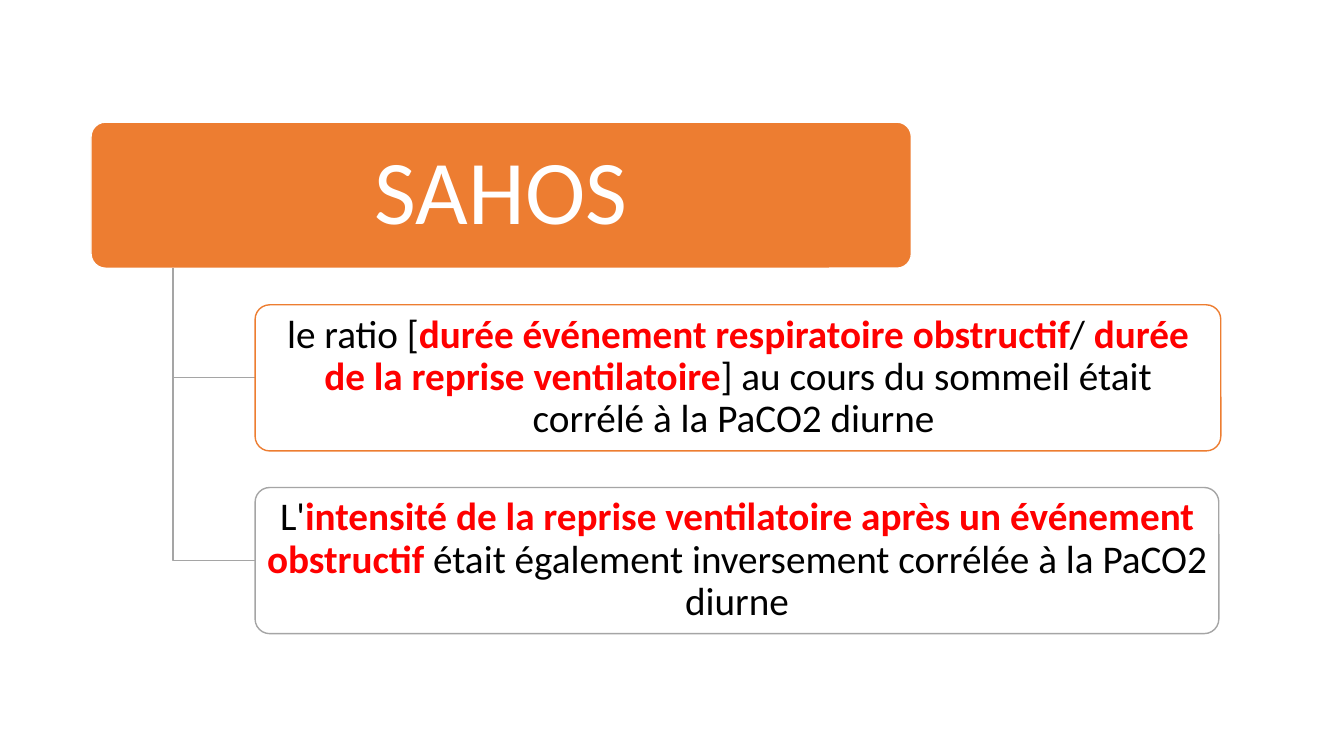
from dataclasses import dataclass

from lxml.etree import SubElement
from pptx import Presentation
from pptx.dml.color import RGBColor
from pptx.enum.shapes import MSO_SHAPE as Preset
from pptx.enum.text import MSO_ANCHOR as Anchor, PP_ALIGN as Align
from pptx.oxml.ns import qn
from pptx.slide import Slide
from pptx.util import Pt

COLORS = {
    "orange": "ED7D31",
    "gray": "A5A5A5",
    "white": "FFFFFF",
    "black": "000000",
    "red": "FF0000",
}
HEIGHT = 104.4
GAP = HEIGHT / 4
HEADING_LEFT, HEADING_TOP, HEADING_WIDTH = 65, 87.2, 586
TRUNK_LEFT = HEADING_LEFT + HEADING_WIDTH / 10
FINDING_LEFT = HEADING_LEFT + HEADING_WIDTH / 5


@dataclass
class Phrase:
    text: str
    color: str = "black"
    bold: bool = False


@dataclass
class Node:
    left: float
    width: float
    fill: str
    outline: str
    size: float
    inset_x: float
    inset_y: float
    phrases: list[Phrase]
    opacity: int = 100


def rgb(name: str) -> RGBColor:
    return RGBColor.from_string(COLORS[name])


def key(text: str) -> Phrase:
    return Phrase(text, "red", True)


def finding(width: float, outline: str, phrases: list[Phrase]) -> Node:
    return Node(FINDING_LEFT, width, "white", outline, 28, 4.2, 2.8, phrases, 90)


HEADING = Node(HEADING_LEFT, HEADING_WIDTH, "orange", "white", 65, 9.75, 6.5,
               [Phrase("SAHOS", "white")])
FINDINGS = [
    finding(689.8, "orange", [
        Phrase("le ratio ["),
        key("durée événement respiratoire obstructif"),
        Phrase("/ "),
        key("durée de la reprise ventilatoire"),
        Phrase("] au cours du sommeil était corrélé à la PaCO2 diurne "),
    ]),
    finding(688.4, "gray", [
        Phrase("L'"),
        key("intensité de la reprise ventilatoire après un événement obstructif "),
        Phrase("était également inversement corrélée à la PaCO2 diurne"),
    ]),
]


def draw_node(slide: Slide, node: Node, top: float) -> None:
    box = slide.shapes.add_shape(Preset.ROUNDED_RECTANGLE, Pt(node.left), Pt(top),
                                 Pt(node.width), Pt(HEIGHT))
    box.adjustments[0] = 0.1
    box.shadow.inherit = False
    box.fill.solid()
    box.fill.fore_color.rgb = rgb(node.fill)
    if node.opacity < 100:
        fill_color = box.fill._xPr.find(qn("a:solidFill"))[0]
        SubElement(fill_color, qn("a:alpha"), val=str(node.opacity * 1000))
    box.line.color.rgb = rgb(node.outline)
    box.line.width = Pt(1)

    frame = box.text_frame
    frame.word_wrap = True
    frame.vertical_anchor = Anchor.MIDDLE
    frame.margin_left = frame.margin_right = Pt(node.inset_x)
    frame.margin_top = frame.margin_bottom = Pt(node.inset_y)
    sentence = frame.paragraphs[0]
    sentence.alignment = Align.CENTER
    sentence.line_spacing = 0.9
    sentence.font.name = "Calibri"
    sentence.font.size = Pt(node.size)
    for phrase in node.phrases:
        run = sentence.add_run()
        run.text = phrase.text
        run.font.color.rgb = rgb(phrase.color)
        run.font.bold = phrase.bold


def draw_branch(slide: Slide, top: float) -> None:
    middle = Pt(top + HEIGHT / 2)
    outline = slide.shapes.build_freeform(Pt(TRUNK_LEFT), Pt(HEADING_TOP + HEIGHT))
    outline.add_line_segments([(Pt(TRUNK_LEFT), middle), (Pt(FINDING_LEFT), middle)],
                              close=False)
    branch = outline.convert_to_shape()
    branch.shadow.inherit = False
    branch.fill.background()
    branch.line.color.rgb = rgb("gray")
    branch.line.width = Pt(1)


def main() -> None:
    deck = Presentation()
    deck.slide_width, deck.slide_height = Pt(960), Pt(540)
    slide = deck.slides.add_slide(deck.slide_layouts[6])
    draw_node(slide, HEADING, HEADING_TOP)
    for row, node in enumerate(FINDINGS, start=1):
        top = HEADING_TOP + row * (HEIGHT + GAP)
        draw_branch(slide, top)
        draw_node(slide, node, top)
    deck.save("out.pptx")


if __name__ == "__main__":
    main()
